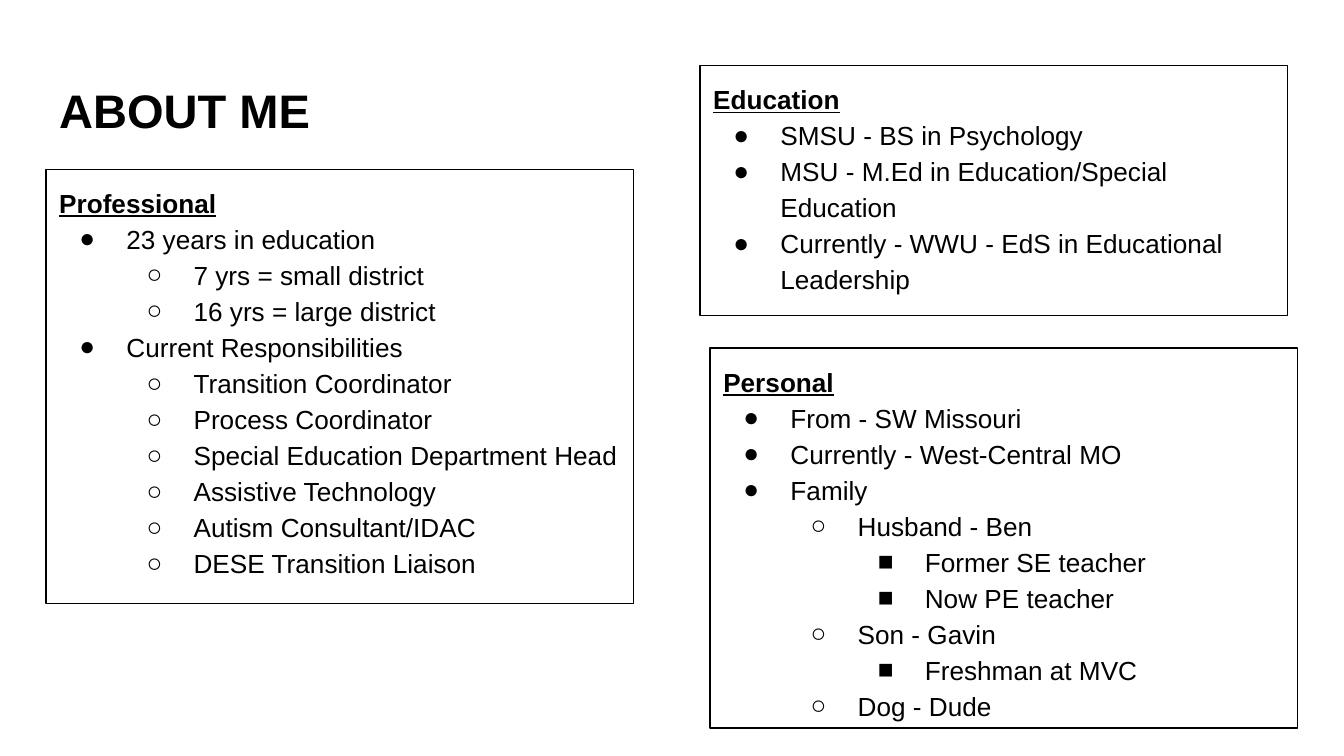
from dataclasses import dataclass

from lxml.etree import SubElement
from pptx import Presentation
from pptx.dml.color import RGBColor
from pptx.enum.shapes import MSO_SHAPE as Shape
from pptx.enum.text import MSO_ANCHOR as Anchor, MSO_AUTO_SIZE as AutoSize, PP_ALIGN as Align
from pptx.oxml.ns import qn
from pptx.util import Cm, Pt


@dataclass(frozen=True)
class Theme:
    """Colours, type sizes and spacing shared by the whole slide."""
    font: str = "Arial"
    ink: str = "000000"
    paper: str = "FFFFFF"
    title_size: float = 25.2
    body_size: float = 14
    line_spacing: float = 1.15
    border: float = 0.75
    inset: float = 0.25
    indent: float = 1.27
    hanging: float = 0.89
    bullets: str = "●○■"


THEME = Theme()

PROFESSIONAL = [
    (1, "23 years in education"),
    (2, "7 yrs = small district"),
    (2, "16 yrs = large district"),
    (1, "Current Responsibilities"),
    (2, "Transition Coordinator"),
    (2, "Process Coordinator"),
    (2, "Special Education Department Head"),
    (2, "Assistive Technology"),
    (2, "Autism Consultant/IDAC"),
    (2, "DESE Transition Liaison"),
]
PERSONAL = [
    (1, "From - SW Missouri"),
    (1, "Currently - West-Central MO"),
    (1, "Family"),
    (2, "Husband - Ben"),
    (3, "Former SE teacher"),
    (3, "Now PE teacher"),
    (2, "Son - Gavin"),
    (3, "Freshman at MVC"),
    (2, "Dog - Dude"),
]
EDUCATION = [
    (1, "SMSU - BS in Psychology"),
    (1, "MSU - M.Ed in Education/Special Education"),
    (1, "Currently - WWU - EdS in Educational Leadership"),
]


def write(paragraph, text, size=THEME.body_size, bold=False, underline=False, spacing=None):
    """Write one formatted run into a left-aligned paragraph."""
    paragraph.alignment = Align.LEFT
    paragraph.line_spacing = spacing
    run = paragraph.add_run()
    run.text = text
    font = run.font
    font.name, font.size = THEME.font, Pt(size)
    font.bold, font.underline = bold, underline
    font.color.rgb = RGBColor.from_string(THEME.ink)


def add_bullet(paragraph, depth):
    """Give a paragraph the hanging bullet of its depth."""
    paragraph.level = depth - 1
    properties = paragraph._p.get_or_add_pPr()
    properties.set("marL", str(Cm(THEME.indent * depth)))
    properties.set("indent", str(-Cm(THEME.hanging)))
    colour = SubElement(properties, qn("a:buClr"))
    SubElement(colour, qn("a:srgbClr"), val=THEME.ink)
    SubElement(properties, qn("a:buFont"), typeface=THEME.font)
    SubElement(properties, qn("a:buChar"), char=THEME.bullets[depth - 1])


def prepare_frame(shape, anchor):
    """Set insets, wrapping and anchor, and return the text frame."""
    frame = shape.text_frame
    frame.word_wrap = True
    frame.auto_size = AutoSize.NONE
    frame.vertical_anchor = anchor
    frame.margin_left = frame.margin_right = Cm(THEME.inset)
    frame.margin_top = frame.margin_bottom = Cm(THEME.inset)
    return frame


def add_title(slide, box, text):
    """Place the slide title in the given box."""
    shape = slide.shapes.add_textbox(*map(Cm, box))
    frame = prepare_frame(shape, Anchor.BOTTOM)
    write(frame.paragraphs[0], text, size=THEME.title_size, bold=True)


def add_panel(slide, box, heading, items):
    """Place a bordered panel with a heading and nested bullets."""
    shape = slide.shapes.add_shape(Shape.RECTANGLE, *map(Cm, box))
    shape.shadow.inherit = False
    shape.fill.background()
    shape.line.color.rgb = RGBColor.from_string(THEME.ink)
    shape.line.width = Pt(THEME.border)
    frame = prepare_frame(shape, Anchor.TOP)
    write(frame.paragraphs[0], heading, bold=True, underline=True, spacing=THEME.line_spacing)
    for depth, text in items:
        paragraph = frame.add_paragraph()
        write(paragraph, text, spacing=THEME.line_spacing)
        add_bullet(paragraph, depth)


def add_about_slide(presentation):
    """Build the slide with its title and three panels."""
    slide = presentation.slides.add_slide(presentation.slide_layouts[6])
    background = slide.background.fill
    background.solid()
    background.fore_color.rgb = RGBColor.from_string(THEME.paper)
    left, top, panel_width = 0.87, 1.24, 11.1
    add_title(slide, (left, top, 23.67, 1.61), "ABOUT ME")
    add_panel(slide, (left, 3.2, panel_width, 8.21), "Professional", PROFESSIONAL)
    add_panel(slide, (13.42, 6.58, panel_width, 7.18), "Personal", PERSONAL)
    add_panel(slide, (13.23, top, panel_width, 4.72), "Education", EDUCATION)


def main():
    """Create and save the presentation."""
    presentation = Presentation()
    presentation.slide_width, presentation.slide_height = Cm(25.4), Cm(14.29)
    add_about_slide(presentation)
    presentation.save("out.pptx")


if __name__ == "__main__":
    main()
